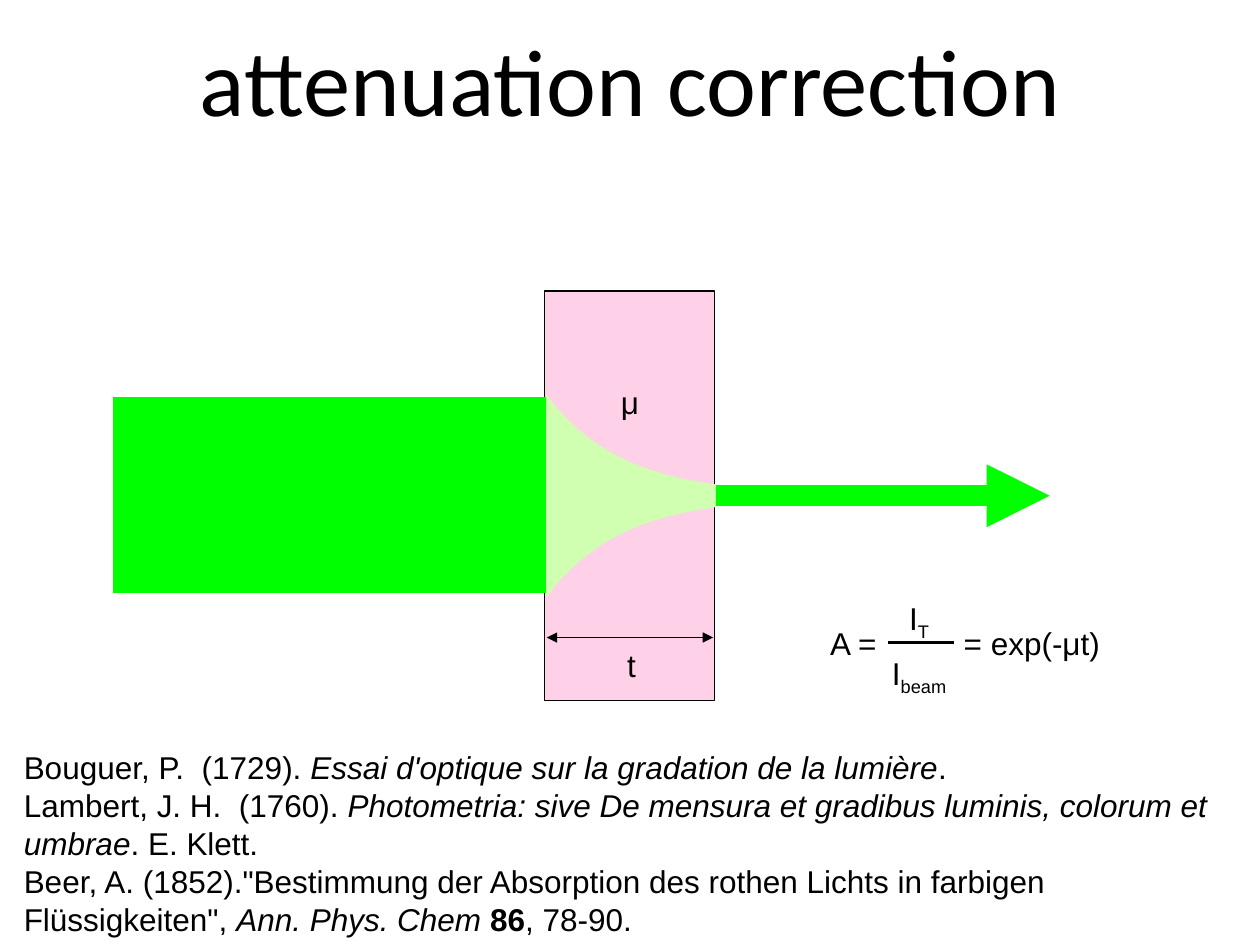
import math

from lxml import etree
from pptx import Presentation
from pptx.dml.color import RGBColor
from pptx.enum import shapes, text
from pptx.oxml.ns import qn
from pptx.util import Inches, Pt

BLACK, GREEN, PINK, PALE = "000000", "00FF00", "FFD1E8", "D1FFB1"
CENTER = text.PP_ALIGN.CENTER


def color(value):
    return RGBColor.from_string(value)


def paint(sp, fill, line):
    sp.shadow.inherit = False
    sp.fill.solid()
    sp.fill.fore_color.rgb = color(fill)
    sp.line.color.rgb = color(line)
    sp.line.width = Pt(0.75)


def add_rect(s, x, y, w, h, fill, line):
    sp = s.shapes.add_shape(shapes.MSO_SHAPE.RECTANGLE,
                            Inches(x), Inches(y), Inches(w), Inches(h))
    paint(sp, fill, line)


def add_line(s, x1, x2, y, line, width, ends=()):
    sp = s.shapes.add_connector(shapes.MSO_CONNECTOR.STRAIGHT,
                                Inches(x1), Inches(y), Inches(x2), Inches(y))
    sp.line.color.rgb = color(line)
    sp.line.width = Pt(width)
    ln = sp.line._get_or_add_ln()
    for end in ends:
        etree.SubElement(ln, qn(f"a:{end}"), type="triangle")
    etree.SubElement(sp._element.spPr, qn("a:effectLst"))


def add_text(s, x, y, w, h, paragraphs, size=18, font="Arial", align=None,
             anchor=text.MSO_ANCHOR.TOP, wrap=True, spacing=None, tab=None):
    """Each paragraph is a list of (text, style); style is "", "i", "b" or "sub"."""
    tf = s.shapes.add_textbox(Inches(x), Inches(y), Inches(w), Inches(h)).text_frame
    tf.word_wrap = wrap
    tf.vertical_anchor = anchor
    for i, runs in enumerate(paragraphs):
        p = tf.paragraphs[0] if i == 0 else tf.add_paragraph()
        if tab:
            tabs = etree.SubElement(p._p.get_or_add_pPr(), qn("a:tabLst"))
            etree.SubElement(tabs, qn("a:tab"), pos=str(Inches(tab)), algn="l")
        p.alignment = align
        p.line_spacing = spacing
        for words, style in runs:
            r = p.add_run()
            r.text = words
            r.font.name, r.font.size = font, Pt(size)
            r.font.color.rgb = color(BLACK)
            r.font.italic = style == "i"
            r.font.bold = style == "b"
            if style == "sub":
                r.font._element.set("baseline", "-25000")


def add_decay(s, x, mid, w, start, end, steps=30):
    """Beam whose half height falls exponentially from start to end."""
    rate = math.log(start / end) / w
    curve = [(w * i / steps, start * math.exp(-rate * w * i / steps))
             for i in range(steps + 1)]
    points = [(x + dx, mid - half) for dx, half in curve]
    points += [(x + dx, mid + half) for dx, half in reversed(curve)]
    points = [(Inches(px), Inches(py)) for px, py in points]
    builder = s.shapes.build_freeform(*points[0])
    builder.add_line_segments(points[1:], close=True)
    paint(builder.convert_to_shape(), PALE, PALE)


def add_diagram(s, x, y, w, h):
    """Absorbing slab in the given box, with the beam passing through it."""
    mid = y + h / 2
    right = x + w
    add_rect(s, x, y, w, h, PINK, BLACK)
    add_decay(s, x + 0.02, mid, w - 0.01, 0.79, 0.085)
    add_rect(s, x - 3.42, mid - 0.78, 3.43, 1.55, GREEN, GREEN)
    add_line(s, right + 0.01, right + 2.66, mid, GREEN, 12, ["tailEnd"])
    # Thickness and coefficient labels
    add_text(s, x + 0.56, y + 2.77, 0.27, 0.4, [[("t", "")]], wrap=False)
    add_line(s, x + 0.02, right - 0.01, y + 2.75, BLACK, 0.75, ["headEnd", "tailEnd"])
    add_text(s, x + 0.51, y + 0.68, 0.35, 0.4, [[("μ", "")]], wrap=False)


def add_formula(s, x, y, w, h):
    """Attenuation factor with a stacked fraction in the gap."""
    add_text(s, x, y + 0.3, w, 0.4, [[("A =\t= exp(-μt)", "")]], tab=1.06)
    add_text(s, x + 0.46, y, 0.69, h,
             [[("I", ""), ("T", "sub")], [("I", ""), ("beam", "sub")]],
             align=CENTER, wrap=False, spacing=1.3)
    add_line(s, x + 0.56, x + 1.08, y + 0.5, BLACK, 1.5)


def add_references(s, x, y, w, h):
    add_text(s, x, y, w, h, [
        [("Bouguer, P.  (1729). ", ""),
         ("Essai d'optique sur la gradation de la lumière", "i"), (".", "")],
        [("Lambert, J. H.  (1760). ", ""),
         ("Photometria: sive De mensura et gradibus luminis, colorum et umbrae", "i"),
         (". E. Klett.", "")],
        [('Beer, A. (1852)."Bestimmung der Absorption des rothen Lichts in farbigen '
          'Flüssigkeiten", ', ""),
         ("Ann. Phys. Chem ", "i"), ("86", "b"), (", 78-90.", "")],
    ])


def main():
    prs = Presentation()
    prs.slide_width, prs.slide_height = Inches(10), Inches(7.5)
    s = prs.slides.add_slide(prs.slide_layouts[6])
    add_text(s, 0.5, 0, 9, 1.25, [[("attenuation correction", "")]], size=54,
             font="Calibri", align=CENTER, anchor=text.MSO_ANCHOR.MIDDLE)
    add_diagram(s, 4.32, 2.31, 1.35, 3.25)
    add_references(s, 0.09, 5.89, 9.88, 1.6)
    add_formula(s, 6.49, 4.6, 3.12, 0.88)
    prs.save("out.pptx")


if __name__ == "__main__":
    main()
